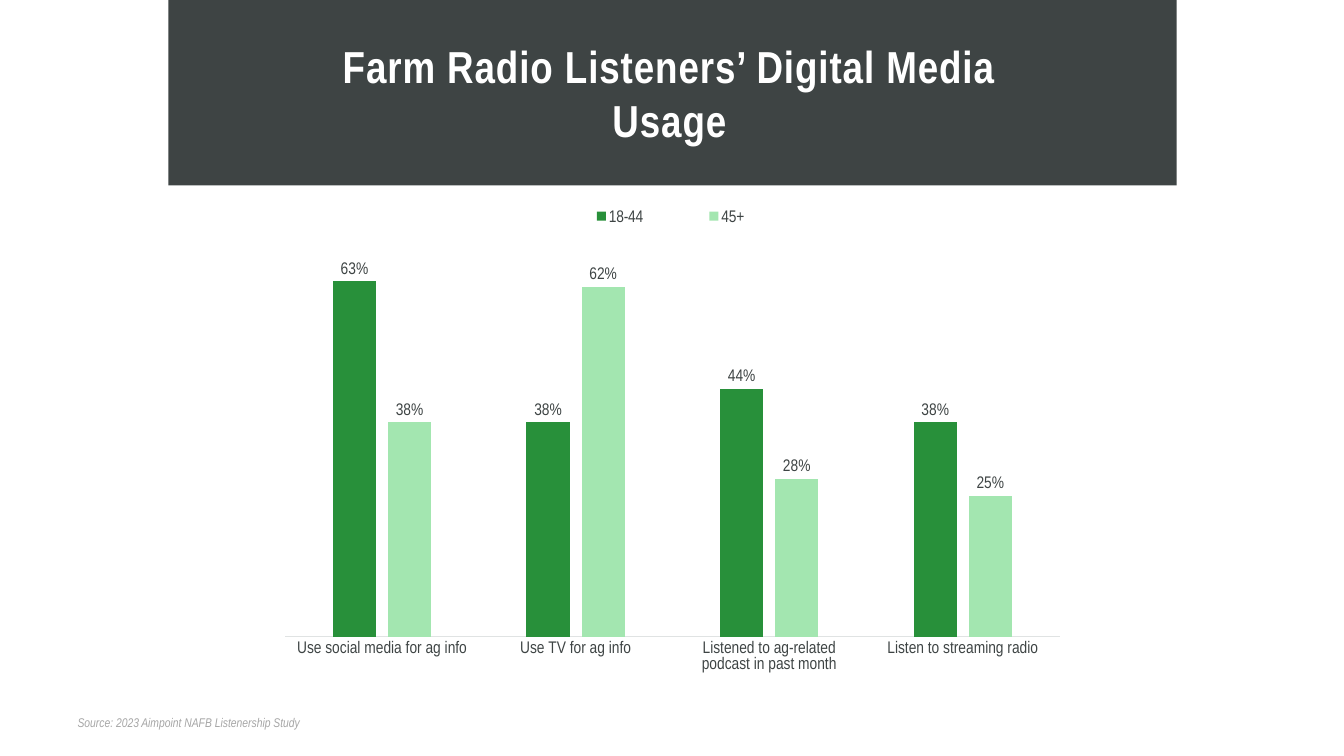
from lxml import etree
from pptx import Presentation
from pptx import util as u
from pptx.chart import data as chart_data
from pptx.dml import color
from pptx.enum import chart as charts, shapes, text
from pptx.oxml import ns

FONT = "Arial Narrow"
COLORS = {"slate": "3E4444", "white": "FFFFFF", "green": "28903A",
          "mint": "A3E6B0", "axis": "E0E3E3", "source": "A6A6A6"}
CATEGORIES = ["Use social media for ag info", "Use TV for ag info",
              "Listened to ag-related podcast in past month",
              "Listen to streaming radio"]
AGE_GROUPS = [("18-44", "green", (0.63, 0.38, 0.44, 0.38)),
              ("45+", "mint", (0.38, 0.62, 0.28, 0.25))]


def rgb(name):
    return color.RGBColor.from_string(COLORS[name])


def paint(shape, name):
    shape.fill.solid()
    shape.fill.fore_color.rgb = rgb(name)
    shape.line.fill.background()


def format_font(font, size, name):
    font.name = FONT
    font.size = u.Pt(size)
    font.color.rgb = rgb(name)


def write(shape, words, size=12, name="slate", bold=False, italic=False,
          align=text.PP_ALIGN.LEFT, spacing=0, margins=(0, 0), wrap=True):
    frame = shape.text_frame
    frame.word_wrap = wrap
    frame.auto_size = text.MSO_AUTO_SIZE.NONE
    frame.vertical_anchor = text.MSO_ANCHOR.MIDDLE
    frame.margin_left, frame.margin_right = map(u.Inches, margins)
    frame.margin_top = frame.margin_bottom = 0
    para = frame.paragraphs[0]
    para.alignment = align
    span = para.add_run()
    span.text = words
    format_font(span.font, size, name)
    span.font.bold, span.font.italic = bold, italic
    if spacing:
        span._r.get_or_add_rPr().set("spc", str(round(spacing * 100)))


def add_text(page, box, words, **style):
    write(page.shapes.add_textbox(*map(u.Inches, box)), words, **style)


def add_title(page, box):
    title = page.shapes.title
    title.left, title.top, title.width, title.height = map(u.Inches, box)
    paint(title, "slate")
    write(title, "Farm Radio Listeners’ Digital Media Usage", size=32,
          name="white", bold=True, align=text.PP_ALIGN.CENTER, spacing=0.65,
          margins=(1.6, 1.66))


def add_legend(page, box, step=1.115, key=0.09):
    left, top, width, height = box
    for index, (label, name, _) in enumerate(AGE_GROUPS):
        x = left + index * step
        swatch = page.shapes.add_shape(
            shapes.MSO_SHAPE.RECTANGLE, u.Inches(x),
            u.Inches(top + (height - key) / 2), u.Inches(key), u.Inches(key))
        swatch.shadow.inherit = False
        paint(swatch, name)
        add_text(page, (x + 0.12, top, width / 2, height), label,
                 spacing=-0.15, wrap=False)


def place_plot(chart, box, plot):
    """Pin the inner plot area at a slide position inside the chart frame."""
    area = chart._chartSpace.find(".//" + ns.qn("c:plotArea"))
    layout = area.find(ns.qn("c:layout"))
    if layout is None:
        layout = etree.Element(ns.qn("c:layout"))
        area.insert(0, layout)
    manual = etree.SubElement(layout, ns.qn("c:manualLayout"))
    settings = {"layoutTarget": "inner", "xMode": "edge", "yMode": "edge",
                "x": (plot[0] - box[0]) / box[2],
                "y": (plot[1] - box[1]) / box[3],
                "w": plot[2] / box[2], "h": plot[3] / box[3]}
    for tag, value in settings.items():
        etree.SubElement(manual, ns.qn("c:" + tag)).set("val", str(value))


def add_usage_chart(page, box):
    left, top, width, height = box
    source = chart_data.CategoryChartData(number_format="0%")
    source.categories = CATEGORIES
    for label, _, values in AGE_GROUPS:
        source.add_series(label, values)
    chart = page.shapes.add_chart(charts.XL_CHART_TYPE.COLUMN_CLUSTERED,
                                  *map(u.Inches, box), source).chart
    chart.has_title = chart.has_legend = False
    format_font(chart.font, 12, "slate")

    # Columns and their labels
    plot = chart.plots[0]
    plot.vary_by_categories = False
    plot.gap_width, plot.overlap = 219, -27
    plot.has_data_labels = True
    labels = plot.data_labels
    labels.show_value = True
    labels.number_format, labels.number_format_is_linked = "0%", False
    labels.position = charts.XL_LABEL_POSITION.OUTSIDE_END
    format_font(labels.font, 12, "slate")
    for series, (_, name, _) in zip(plot.series, AGE_GROUPS):
        series.format.fill.solid()
        series.format.fill.fore_color.rgb = rgb(name)

    # Axes
    scale = chart.value_axis
    scale.minimum_scale, scale.maximum_scale = 0, 0.7
    scale.has_major_gridlines = False
    scale.visible = False
    base = chart.category_axis
    base.major_tick_mark = charts.XL_TICK_MARK.NONE
    base.format.line.color.rgb = rgb("axis")
    base.format.line.width = u.Pt(0.75)
    format_font(base.tick_labels.font, 12, "slate")
    place_plot(chart, box, (left + 0.2, top + 0.1, width - 0.4, height - 0.8))


def add_source(page, box):
    add_text(page, box, "Source: 2023 Aimpoint NAFB Listenership Study",
             size=9, name="source", italic=True)


def main():
    deck = Presentation()
    deck.slide_width, deck.slide_height = u.Inches(13.33), u.Inches(7.5)
    page = deck.slides.add_slide(deck.slide_layouts[5])
    add_title(page, (1.67, 0, 10, 1.84))
    add_usage_chart(page, (2.63, 2.3, 8.08, 4.72))
    add_legend(page, (5.92, 2.03, 1.4, 0.23))
    add_source(page, (0.77, 7.08, 2.5, 0.18))
    deck.save("out.pptx")


if __name__ == "__main__":
    main()
